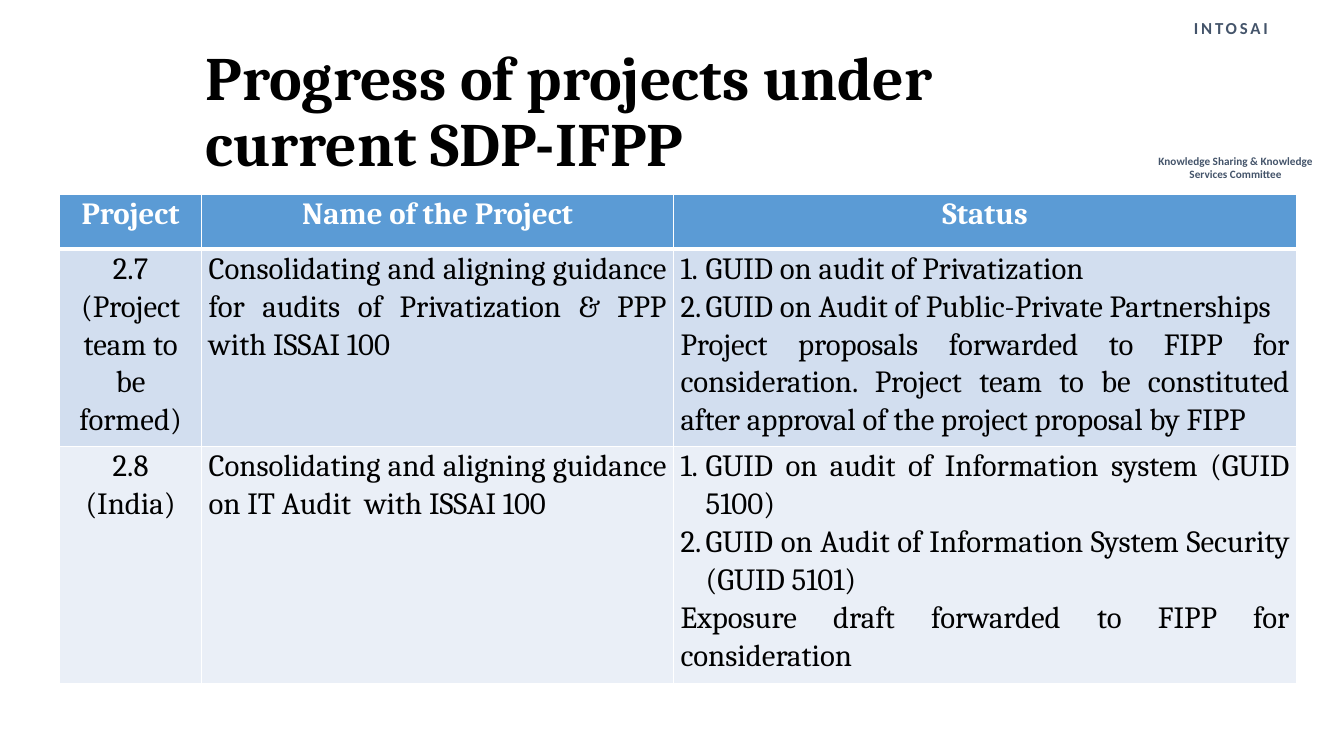
from lxml.etree import SubElement
from pptx import Presentation
from pptx.dml.color import RGBColor
from pptx.enum.text import MSO_ANCHOR, MSO_AUTO_SIZE, PP_ALIGN
from pptx.oxml.ns import qn
from pptx.util import Inches, Pt

BLACK = RGBColor(0x00, 0x00, 0x00)
WHITE = RGBColor(0xFF, 0xFF, 0xFF)
SLATE = RGBColor(0x44, 0x54, 0x6A)
HEADER_BLUE = RGBColor(0x5B, 0x9B, 0xD5)
BAND_DARK = RGBColor(0xD2, 0xDE, 0xEF)
BAND_LIGHT = RGBColor(0xEA, 0xEF, 0xF7)


def write(paragraph, text, alignment, spacing, name, size, color, bold):
    paragraph.alignment = alignment
    paragraph.line_spacing = spacing
    run = paragraph.add_run()
    run.text = text
    font_format = {"name": name, "size": Pt(size), "bold": bold}
    for attribute, value in font_format.items():
        setattr(run.font, attribute, value)
    run.font.color.rgb = color
    return run


def add_border(cell, side, width):
    line = SubElement(cell._tc.get_or_add_tcPr(), qn(f"a:ln{side}"), w=str(Pt(width)))
    fill = SubElement(line, qn("a:solidFill"))
    SubElement(fill, qn("a:srgbClr"), val=str(WHITE))


presentation = Presentation()
presentation.slide_width = Inches(13.33)
presentation.slide_height = Inches(7.5)
slide = presentation.slides.add_slide(presentation.slide_layouts[5])

committee_labels = [
    ("INTOSAI", (11.41, 0.13, 1.6, 0.3), 12, 200),
    ("Knowledge Sharing & Knowledge Services Committee", (11.22, 1.48, 2.07, 0.37), 8, 0),
]
for text, box, size, letter_spacing in committee_labels:
    frame = slide.shapes.add_textbox(*map(Inches, box)).text_frame
    frame.word_wrap = True
    run = write(frame.paragraphs[0], text, PP_ALIGN.CENTER, 1.0, "Calibri", size, SLATE, True)
    run.font._element.set("spc", str(letter_spacing))

title = slide.shapes.title
title_format = {
    "left": Inches(1.94), "top": Inches(0.4),
    "width": Inches(9.06), "height": Inches(1.45),
}
for attribute, value in title_format.items():
    setattr(title, attribute, value)
title.text_frame.auto_size = MSO_AUTO_SIZE.NONE
title.text_frame.vertical_anchor = MSO_ANCHOR.MIDDLE
write(title.text_frame.paragraphs[0], "Progress of projects under current SDP-IFPP",
      PP_ALIGN.LEFT, 0.9, "Cambria", 44, BLACK, True)

project_rows = [
    [["Project"], ["Name of the Project"], ["Status"]],
    [
        ["2.7", "(Project team to be formed)"],
        ["Consolidating and aligning guidance for audits of Privatization & PPP with ISSAI 100"],
        [
            "GUID on audit of Privatization",
            "GUID on Audit of Public-Private Partnerships",
            "Project proposals forwarded to FIPP for consideration. Project team to be "
            "constituted after approval of the project proposal by FIPP",
        ],
    ],
    [
        ["2.8", "(India)"],
        ["Consolidating and aligning guidance on IT Audit  with ISSAI 100"],
        [
            "GUID on audit of Information system (GUID 5100)",
            "GUID on Audit of Information System Security (GUID 5101)",
            "Exposure draft forwarded to FIPP for consideration",
        ],
    ],
]
column_widths = [1.41, 4.68, 6.18]
row_heights = [0.54, 1.88, 2.26]
row_fills = [HEADER_BLUE, BAND_DARK, BAND_LIGHT]
cell_format = {
    "margin_left": Inches(0.07), "margin_right": Inches(0.07),
    "margin_top": 0, "margin_bottom": 0,
}

table = slide.shapes.add_table(
    len(row_heights), len(column_widths), Inches(0.59), Inches(1.93),
    Inches(sum(column_widths)), Inches(sum(row_heights))).table
for column, width in zip(table.columns, column_widths):
    column.width = Inches(width)
for row, height in zip(table.rows, row_heights):
    row.height = Inches(height)

for row_index, project_row in enumerate(project_rows):
    is_header = row_index == 0
    for column_index, texts in enumerate(project_row):
        cell = table.cell(row_index, column_index)
        for attribute, value in cell_format.items():
            setattr(cell, attribute, value)
        for side in "LRTB":
            below_header = (row_index, side) in [(0, "B"), (1, "T")]
            add_border(cell, side, 3 if below_header else 1)
        cell.fill.solid()
        cell.fill.fore_color.rgb = row_fills[row_index]
        centred = is_header or column_index == 0
        for index, text in enumerate(texts):
            frame = cell.text_frame
            paragraph = frame.paragraphs[0] if index == 0 else frame.add_paragraph()
            if column_index == 2 and index < len(texts) - 1:
                properties = paragraph._p.get_or_add_pPr()
                properties.set("marL", str(Inches(0.25)))
                properties.set("indent", str(Inches(-0.25)))
                SubElement(properties, qn("a:buAutoNum"), type="arabicPeriod")
            write(paragraph, text, PP_ALIGN.CENTER if centred else PP_ALIGN.JUSTIFY, 1.07,
                  "Cambria", 22, WHITE if is_header else BLACK, is_header)

presentation.save("out.pptx")
